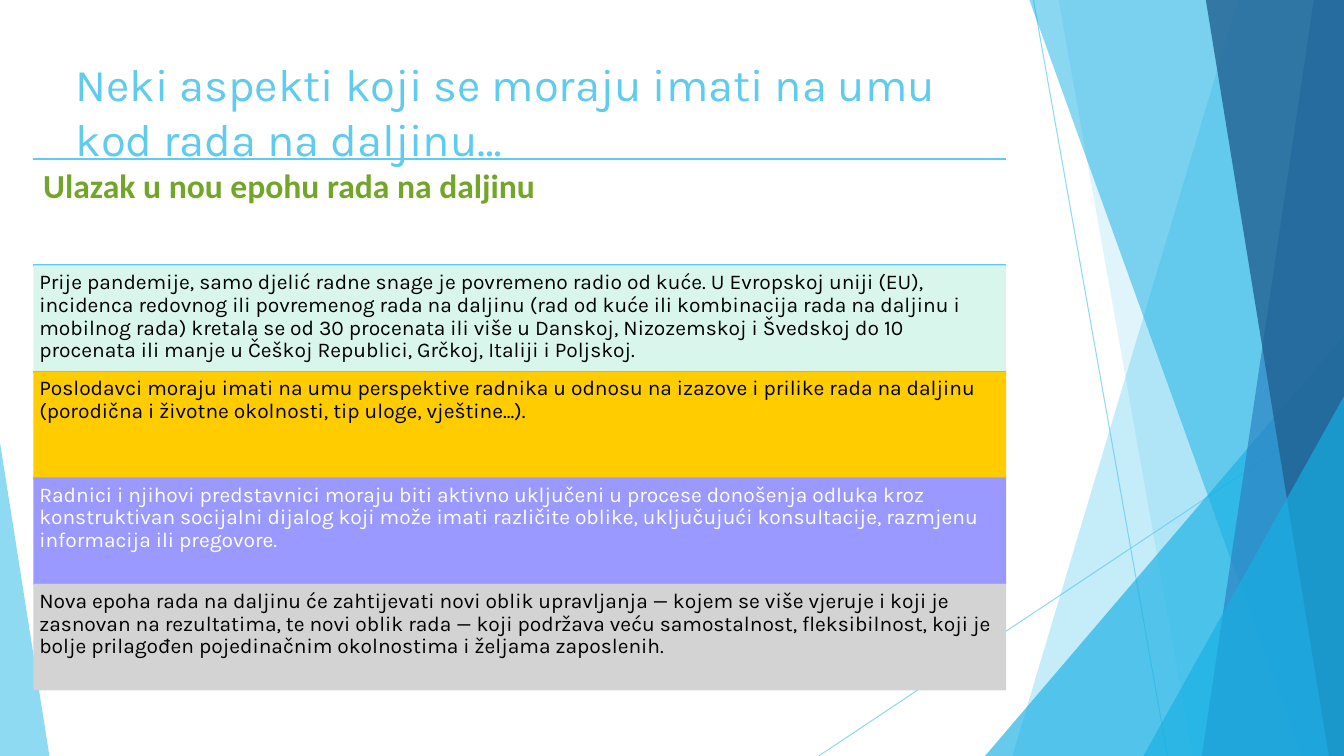
from lxml import etree
from pptx import Presentation
from pptx.dml.color import RGBColor
from pptx.enum.shapes import MSO_CONNECTOR, MSO_SHAPE
from pptx.enum.text import MSO_ANCHOR, MSO_AUTO_SIZE, PP_ALIGN
from pptx.oxml.ns import qn
from pptx.util import Inches, Pt

STRAIGHT = MSO_CONNECTOR.STRAIGHT
RECTANGLE = MSO_SHAPE.RECTANGLE
TRIANGLE = MSO_SHAPE.ISOSCELES_TRIANGLE
TOP = MSO_ANCHOR.TOP
LEFT = PP_ALIGN.LEFT
NO_FIT = MSO_AUTO_SIZE.NONE

WIDTH, HEIGHT = 13.33, 7.5
COLORS = {
    "sky": "5FCBEF", "cyan": "17B0E4", "blue": "2E83C3", "navy": "226292",
    "green": "72A528", "mint": "D9F6EC", "gold": "FFCC00",
    "violet": "9999FF", "gray": "D3D3D3", "black": "000000", "white": "FFFFFF",
}

TITLE = "Neki aspekti koji se moraju imati na umu kod rada na daljinu…"
HEADING = "Ulazak u nou epohu rada na daljinu"
ASPECTS = [
    ("mint", "black",
     "Prije pandemije, samo djelić radne snage je povremeno radio od kuće. "
     "U Evropskoj uniji (EU), incidenca redovnog ili povremenog rada na daljinu "
     "(rad od kuće ili kombinacija rada na daljinu i mobilnog rada) kretala se od "
     "30 procenata ili više u Danskoj, Nizozemskoj i Švedskoj do 10 procenata ili "
     "manje u Češkoj Republici, Grčkoj, Italiji i Poljskoj."),
    ("gold", "black",
     "Poslodavci moraju imati na umu perspektive radnika u odnosu na izazove i "
     "prilike rada na daljinu (porodična i životne okolnosti, tip uloge, vještine...)."),
    ("violet", "white",
     "Radnici i njihovi predstavnici moraju biti aktivno uključeni u procese "
     "donošenja odluka kroz konstruktivan socijalni dijalog koji može imati različite "
     "oblike, uključujući konsultacije, razmjenu informacija ili pregovore."),
    ("gray", "black",
     "Nova epoha rada na daljinu će zahtijevati novi oblik upravljanja — kojem se više "
     "vjeruje i koji je zasnovan na rezultatima, te novi oblik rada — koji podržava "
     "veću samostalnost, fleksibilnost, koji je bolje prilagođen pojedinačnim "
     "okolnostima i željama zaposlenih."),
]


def rgb(name):
    return RGBColor.from_string(COLORS[name])


def set_alpha(fill_parent, percent):
    color = next(fill_parent.iter(qn("a:srgbClr")))
    etree.SubElement(color, qn("a:alpha")).set("val", str(percent * 1000))


def paint(shape, color, alpha=100):
    shape.shadow.inherit = False
    shape.line.fill.background()
    shape.fill.solid()
    shape.fill.fore_color.rgb = rgb(color)
    if alpha < 100:
        set_alpha(shape.fill._xPr, alpha)


def add_line(page, start, end, weight, alpha=100):
    points = [Inches(value) for value in (*start, *end)]
    line = page.shapes.add_connector(STRAIGHT, *points)
    line.line.color.rgb = rgb("sky")
    line.line.width = Pt(weight)
    if alpha < 100:
        set_alpha(line.line._ln, alpha)
    etree.SubElement(line._element.spPr, qn("a:effectLst"))


def write(shape, text, color, inset, line_spacing, **font):
    frame = shape.text_frame
    margins = {f"margin_{side}": Inches(inset) for side in ("left", "top", "right", "bottom")}
    frame_format = {"word_wrap": True, "auto_size": NO_FIT, "vertical_anchor": TOP, **margins}
    for name, value in frame_format.items():
        setattr(frame, name, value)
    para = frame.paragraphs[0]
    para.alignment = LEFT
    para.line_spacing = line_spacing
    span = para.add_run()
    span.text = text
    for name, value in font.items():
        setattr(span.font, name, value)
    span.font.color.rgb = rgb(color)


def add_triangle(page, box, apex, color, alpha):
    triangle = page.shapes.add_shape(TRIANGLE, *map(Inches, box))
    triangle.adjustments[0] = apex
    paint(triangle, color, alpha)


def add_band(page, box, top_x, bottom_x, color, alpha):
    left, top, width, height = box
    right, bottom = left + width, top + height
    corners = [(left + top_x, top), (right, top), (right, bottom), (left + bottom_x, bottom)]
    points = [(Inches(x), Inches(y)) for x, y in corners]
    builder = page.shapes.build_freeform(*points[0], scale=1.0)
    builder.add_line_segments(points[1:], close=True)
    paint(builder.convert_to_shape(), color, alpha)


def add_facets(page, box):
    left, top, width, height = box
    right, bottom = left + width, top + height
    add_line(page, (left + 2.13, top), (left + 3.46, bottom), 0.75, 70)
    add_line(page, (right, top + 4.03), (left, bottom), 0.75, 70)
    add_band(page, box, 4.16, 1.92, "sky", 36)
    add_band(page, box, 2.38, 3.71, "sky", 20)
    add_triangle(page, (right - 3.56, bottom - 4.17, 3.56, 4.17), 1, "cyan", 66)
    add_band(page, box, 2.09, 4.79, "cyan", 50)
    add_band(page, box, 4.91, 3.8, "blue", 70)
    add_band(page, box, 3.84, 5.06, "navy", 80)
    add_triangle(page, (right - 1.99, bottom - 3.57, 1.99, 3.57), 1, "cyan", 66)


def place_title(page, box):
    title = page.shapes.title
    title.left, title.top, title.width, title.height = map(Inches, box)
    write(title, TITLE, "sky", 0.1, 1.0, name="Karla", size=Pt(32.4), bold=False)


def add_aspects(page, box):
    left, top, width, height = box
    row_height = height / (len(ASPECTS) + 1)
    add_line(page, (left, top), (left + width, top), 1.5)
    heading = page.shapes.add_textbox(*map(Inches, (left, top, width, row_height)))
    write(heading, HEADING, "green", 0.1, 0.9, name="Calibri", size=Pt(24), bold=True)
    for index, (fill, ink, text) in enumerate(ASPECTS, start=1):
        row_top = top + index * row_height
        add_line(page, (left, row_top), (left + width, row_top), 1.5)
        row = page.shapes.add_shape(RECTANGLE, *map(Inches, (left, row_top, width, row_height)))
        paint(row, fill)
        write(row, text, ink, 0.06, 0.9, name="Karla", size=Pt(15))


def main():
    deck = Presentation()
    deck.slide_width, deck.slide_height = Inches(WIDTH), Inches(HEIGHT)
    page = deck.slides.add_slide(deck.slide_layouts[5])
    page.background.fill.solid()
    page.background.fill.fore_color.rgb = rgb("white")
    add_facets(page, (8.12, 0, WIDTH - 8.12, HEIGHT))
    add_triangle(page, (0, 4.39, 0.49, 3.11), 0, "sky", 70)
    place_title(page, (0.65, 0.46, 9.4, 0.58))
    add_aspects(page, (0.33, 1.58, 9.65, 5.27))
    deck.save("out.pptx")


if __name__ == "__main__":
    main()
